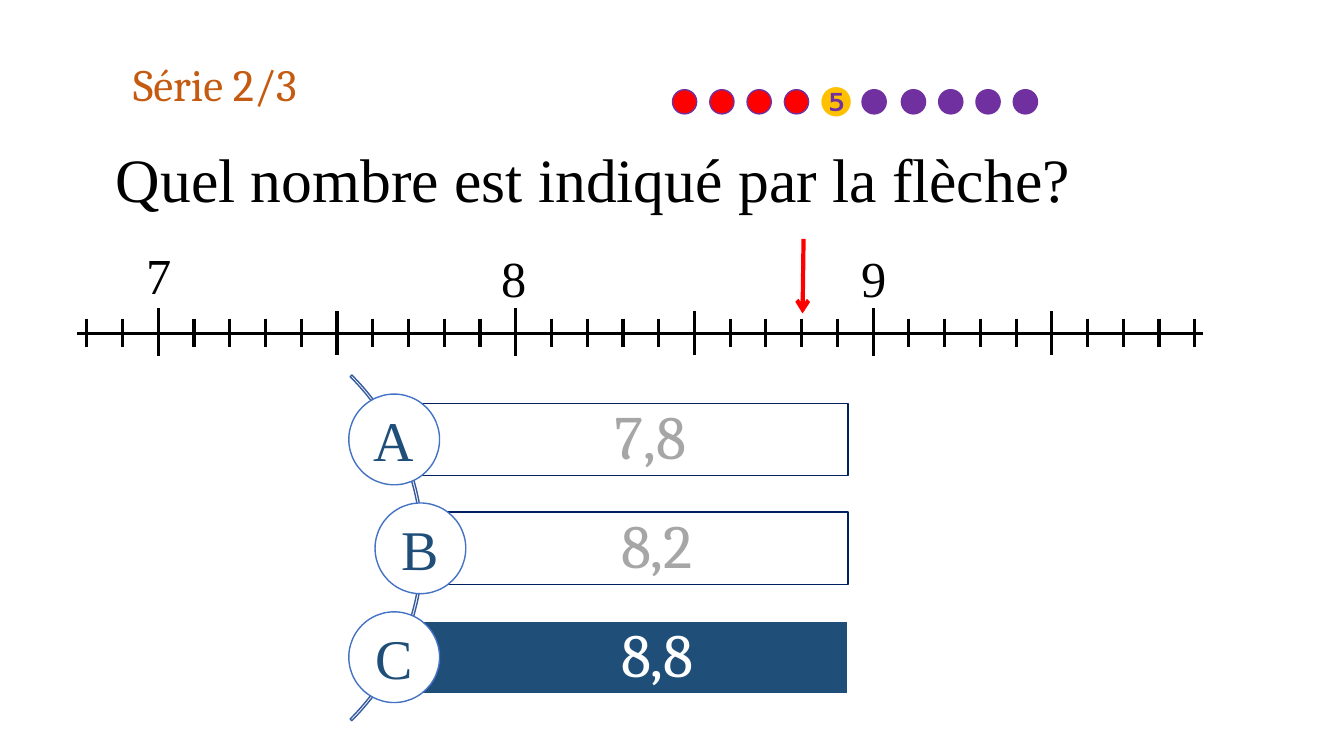
from dataclasses import dataclass

from lxml.etree import SubElement
from pptx import Presentation
from pptx.dml.color import RGBColor
from pptx.enum.shapes import MSO_CONNECTOR, MSO_SHAPE
from pptx.enum.text import MSO_ANCHOR as ANCHOR, MSO_AUTO_SIZE as AUTO, PP_ALIGN as ALIGN
from pptx.oxml.ns import qn
from pptx.util import Pt

PX = 9144  # EMU per px, 100 px to the inch


@dataclass(frozen=True)
class Theme:
    serif: str = "Times New Roman"
    accent_font: str = "Cambria"
    symbol_font: str = "Arial"
    black: str = "000000"
    white: str = "FFFFFF"
    orange: str = "C55A11"
    red: str = "FF0000"
    purple: str = "7030A0"
    gold: str = "FFC000"
    navy: str = "002060"
    blue: str = "1F4E79"
    ring: str = "4472C4"
    arc: str = "365B9D"
    grey: str = "A6A6A6"
    badge_size: int = 28
    series_size: int = 32
    number_size: int = 36
    letter_size: int = 40
    large_size: int = 44


T = Theme()

SERIES = "Série 2/3"
QUESTION = "Quel nombre est indiqué par la flèche?"
CURRENT_BADGE = "❺"
DOT_LEFTS = [667, 704, 741, 778, 817, 855, 894, 931, 968, 1005]
DONE = 4
AXIS_NUMBERS = [("7", 122, 237), ("8", 474, 240), ("9", 831, 240)]
# letter, answer, circle left, left inset, is the right answer
ANSWERS = [
    ("A", "7,8", 346, 70, False),
    ("B", "8,2", 372, 57, False),
    ("C", "8,8", 346, 84, True),
]

AXIS_LEFT, AXIS_RIGHT, AXIS_Y = 76, 1193, 331
FIRST_UNIT, LAST_UNIT = 157, 866
TENTH = (LAST_UNIT - FIRST_UNIT) / 20
CIRCLE, BAR_H, BAR_RIGHT = 90, 72, 841
FIRST_CIRCLE_TOP, ANSWER_STEP = 391, 108


def px(*lengths):
    return [round(n * PX) for n in lengths]


def rgb(color):
    return RGBColor.from_string(color)


def write(shape, text, *, size, font, color, align=ALIGN.LEFT, anchor=ANCHOR.TOP,
          insets=(10, 5, 10, 5), wrap=True, spacing=None, auto=AUTO.NONE):
    tf = shape.text_frame
    tf.word_wrap, tf.auto_size, tf.vertical_anchor = wrap, auto, anchor
    tf.margin_left, tf.margin_top, tf.margin_right, tf.margin_bottom = px(*insets)
    p = tf.paragraphs[0]
    p.alignment = align
    if spacing:
        p.line_spacing = spacing
    r = p.add_run()
    r.text = text
    r.font.size, r.font.name, r.font.color.rgb = Pt(size), font, rgb(color)


def add_label(s, text, box, **fmt):
    write(s.shapes.add_textbox(*px(*box)), text, auto=AUTO.SHAPE_TO_FIT_TEXT, **fmt)


def add_outlined(s, kind, box, line, fill=None):
    sp = s.shapes.add_shape(kind, *px(*box))
    sp.shadow.inherit = False
    if fill:
        sp.fill.solid()
        sp.fill.fore_color.rgb = rgb(fill)
    else:
        sp.fill.background()
    sp.line.color.rgb, sp.line.width = rgb(line), Pt(1)
    return sp


def add_line(s, start, end, color=T.black, width=2.25, arrow=False):
    cx = s.shapes.add_connector(MSO_CONNECTOR.STRAIGHT, *px(*start, *end))
    cx.line.color.rgb, cx.line.width = rgb(color), Pt(width)
    if arrow:
        SubElement(cx.line._get_or_add_ln(), qn("a:tailEnd"), type="arrow")
    SubElement(cx._element.spPr, qn("a:effectLst"))


def add_title(s):
    title = s.shapes.title
    title.left, title.top, title.width, title.height = px(122, 59, 209, 54)
    write(title, SERIES, size=T.series_size, font=T.accent_font, color=T.orange,
          anchor=ANCHOR.MIDDLE, spacing=0.9)


def add_progress(s):
    for i, left in enumerate(DOT_LEFTS):
        add_outlined(s, MSO_SHAPE.OVAL, (left, 89, 24, 24), T.purple,
                     T.red if i < DONE else T.purple)
    add_label(s, CURRENT_BADGE, (802, 72, 52, 57), size=T.badge_size,
              font=T.symbol_font, color=T.gold)


def add_number_line(s):
    add_line(s, (AXIS_LEFT, AXIS_Y), (AXIS_RIGHT, AXIS_Y))
    for k in range(-2, 30):
        if k % 10 == 0:
            top, bottom = 306, 353
        elif k % 5 == 0:
            top, bottom = 309, 352
        else:
            top, bottom = 316, 344
        x = FIRST_UNIT + k * TENTH
        add_line(s, (x, top), (x, bottom))
    for number, left, top in AXIS_NUMBERS:
        add_label(s, number, (left, top, 71, 71), size=T.number_size, font=T.serif,
                  color=T.black, align=ALIGN.CENTER)
    add_line(s, (797, 237), (796, 311), T.red, 3, arrow=True)


def add_answers(s):
    arc = add_outlined(s, MSO_SHAPE.BLOCK_ARC, (-65, 301, 485, 485), T.arc)
    for i, value in enumerate((189, 27, 0.005)):
        arc.adjustments[i] = value
    for i, (letter, answer, left, inset, right) in enumerate(ANSWERS):
        top = FIRST_CIRCLE_TOP + i * ANSWER_STEP
        bar_left = left + CIRCLE // 2
        bar = add_outlined(
            s, MSO_SHAPE.RECTANGLE,
            (bar_left, top + (CIRCLE - BAR_H) // 2, BAR_RIGHT - bar_left, BAR_H),
            T.white if right else T.navy, T.blue if right else None)
        write(bar, answer, size=T.large_size, font=T.accent_font,
              color=T.white if right else T.grey, align=ALIGN.CENTER,
              anchor=ANCHOR.MIDDLE, insets=(inset, 12, 12, 12), spacing=0.9)
        circle = add_outlined(s, MSO_SHAPE.OVAL, (left, top, CIRCLE, CIRCLE), T.ring, T.white)
        write(circle, letter, size=T.letter_size, font=T.serif, color=T.blue,
              align=ALIGN.CENTER, anchor=ANCHOR.MIDDLE, insets=(0, 0, 0, 0))


def main():
    prs = Presentation()
    prs.slide_width, prs.slide_height = px(1333, 750)
    s = prs.slides.add_slide(prs.slide_layouts[5])
    add_title(s)
    add_progress(s)
    add_label(s, QUESTION, (105, 135, 976, 84), size=T.large_size, font=T.serif,
              color=T.black, wrap=False)
    add_number_line(s)
    add_answers(s)
    prs.save("out.pptx")


if __name__ == "__main__":
    main()
